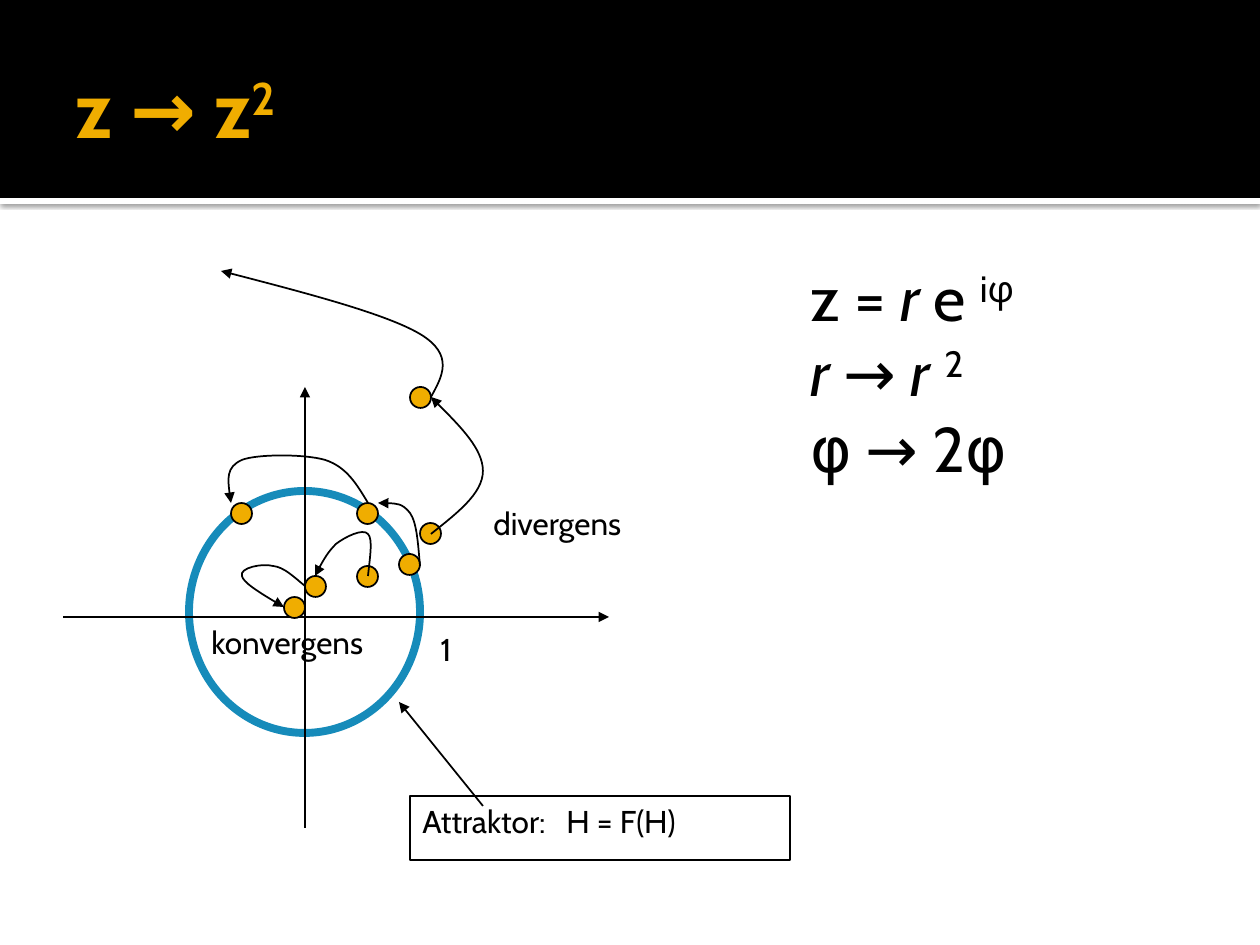
"""Builds the slide on iterating z → z² in the complex plane."""
from lxml import etree
from pptx import Presentation
from pptx import util as u
from pptx.dml.color import RGBColor
from pptx.enum import shapes, text
from pptx.oxml.ns import qn

SCALE = u.Inches(1) / 126
FONT = "Cabin"
DOT = 21
COLORS = {"black": "000000", "white": "FFFFFF", "gold": "F0AD00", "blue": "168BBA"}
SUPER = {"baseline": 30000}
ITALIC = {"italic": True}

DOTS = [(420, 523), (410, 387), (357, 566), (305, 576),
        (284, 597), (399, 554), (357, 503), (231, 503)]
ORBITS = [
    [(431, 534), (456, 514), (483, 494), (483, 471), (483, 449), (456, 422), (431, 397)],
    [(431, 397), (442, 377), (455, 355), (420, 334), (386, 314), (302, 292), (221, 271)],
    [(368, 576), (370, 557), (373, 539), (368, 534), (363, 528), (345, 537), (336, 544),
     (328, 552), (321, 564), (315, 576)],
    [(305, 586), (294, 577), (284, 567), (273, 566), (262, 563), (239, 568), (242, 576),
     (243, 582), (263, 595), (284, 607)],
    [(420, 566), (418, 544), (417, 523), (410, 513), (402, 503), (391, 503), (378, 503)],
    [(368, 503), (357, 485), (347, 467), (325, 460), (305, 454), (257, 454), (242, 460),
     (226, 467), (228, 485), (231, 503)],
]
ARROWS = [((305, 828), (305, 387)), ((63, 617), (609, 617)), ((483, 806), (399, 702))]
LABELS = [("1", (428, 624, 47, 63)), ("divergens", (481, 498, 189, 63)),
          ("konvergens", (199, 617, 219, 63))]
FORMULAS = [
    [("z = ", {}), ("r", ITALIC), (" e ", {}), ("iφ", SUPER)],
    [("r ", ITALIC), ("→ ", {}), ("r ", ITALIC), ("2", SUPER)],
    [("φ → 2φ", {})],
]


def px(*lengths):
    """Turn pixel lengths into EMU."""
    return [u.Emu(round(length * SCALE)) for length in lengths]


def rgb(name):
    """Look up a named colour."""
    return RGBColor.from_string(COLORS[name])


def add_figure(page, kind, area, fill=None, line=None, weight=1):
    """Add a preset shape with plain fill and outline."""
    figure = page.shapes.add_shape(kind, *px(*area))
    figure.shadow.inherit = False
    if fill:
        figure.fill.solid()
        figure.fill.fore_color.rgb = rgb(fill)
    else:
        figure.fill.background()
    if line:
        figure.line.color.rgb = rgb(line)
        figure.line.width = u.Pt(weight)
    else:
        figure.line.fill.background()
    return figure


def add_band_shadow(band):
    """Give the band a soft shadow underneath."""
    effects = band.element.spPr.find(qn("a:effectLst"))
    shadow = etree.SubElement(effects, qn("a:outerShdw"), blurRad=str(u.Pt(2.5)),
                              dist=str(u.Pt(0.8)), dir="5400000")
    color = etree.SubElement(shadow, qn("a:srgbClr"), val=COLORS["black"])
    etree.SubElement(color, qn("a:alpha"), val="60000")


def write(shape, lines, size, color="black", **frame_format):
    """Fill a shape with paragraphs of formatted spans."""
    frame = shape.text_frame
    settings = {"word_wrap": True, "vertical_anchor": text.MSO_ANCHOR.TOP, **frame_format}
    for name, value in settings.items():
        setattr(frame, name, value)
    for index, spans in enumerate(lines):
        para = frame.add_paragraph() if index else frame.paragraphs[0]
        para.alignment = text.PP_ALIGN.LEFT
        for words, extra in spans:
            span = para.add_run()
            span.text = words
            span.font.color.rgb = rgb(color)
            values = {"name": FONT, "size": u.Pt(size), **extra}
            baseline = values.pop("baseline", None)
            for name, value in values.items():
                setattr(span.font, name, value)
            if baseline:
                span._r.get_or_add_rPr().set("baseline", str(baseline))


def add_text(page, area, lines, size):
    """Add a text box."""
    write(page.shapes.add_textbox(*px(*area)), lines, size)


def finish_arrow(line_shape):
    """Draw a thin black line with a triangle at its end."""
    line_shape.line.color.rgb = rgb("black")
    line_shape.line.width = u.Pt(1)
    line = line_shape.element.spPr.find(qn("a:ln"))
    etree.SubElement(line, qn("a:tailEnd"), type="triangle")


def add_arrow(page, start, end):
    """Add a straight arrow."""
    arrow = page.shapes.add_connector(shapes.MSO_CONNECTOR.STRAIGHT, *px(*start, *end))
    finish_arrow(arrow)
    etree.SubElement(arrow.element.spPr, qn("a:effectLst"))


def add_orbit(page, points):
    """Add a curved arrow through cubic Bézier points."""
    builder = page.shapes.build_freeform(*points[0], scale=SCALE)
    builder.add_line_segments(points[1:], close=False)
    orbit = builder.convert_to_shape()
    orbit.shadow.inherit = False
    orbit.fill.background()
    steps = list(orbit.element.iter(qn("a:lnTo")))
    outline = steps[0].getparent()
    for first in range(0, len(steps), 3):
        curve = etree.SubElement(outline, qn("a:cubicBezTo"))
        for step in steps[first:first + 3]:
            curve.append(step[0])
            outline.remove(step)
    finish_arrow(orbit)


def add_header(page):
    """Add the black header with its title."""
    rectangle = shapes.MSO_SHAPE.RECTANGLE
    add_band_shadow(add_figure(page, rectangle, (0, 198, 1260, 6), "white"))
    add_figure(page, rectangle, (0, 0, 1260, 198), "black")
    title = page.shapes.title
    page.shapes.element.append(title.element)
    title.left, title.top, title.width, title.height = px(63, 21, 1134, 173)
    bold = {"bold": True}
    write(title, [[("z → z", bold), ("2", {**bold, **SUPER})]], 45, "gold",
          vertical_anchor=text.MSO_ANCHOR.MIDDLE, auto_size=text.MSO_AUTO_SIZE.NONE,
          margin_right=u.Inches(0.05))


def add_attractor(page):
    """Add the boxed attractor equation, its parts set apart by a tab stop."""
    box = add_figure(page, shapes.MSO_SHAPE.RECTANGLE, (410, 796, 380, 64), line="black")
    write(box, [[("Attraktor:\tH = F(H)", {})]], 18)
    tabs = etree.SubElement(box.text_frame.paragraphs[0]._p.get_or_add_pPr(), qn("a:tabLst"))
    etree.SubElement(tabs, qn("a:tab"), pos=str(px(144)[0]), algn="l")


def main():
    """Build and save the slide."""
    deck = Presentation()
    deck.slide_width, deck.slide_height = px(1260, 945)
    page = deck.slides.add_slide(deck.slide_layouts[5])
    add_header(page)
    oval = shapes.MSO_SHAPE.OVAL
    add_figure(page, oval, (189, 491, 231, 242), line="blue", weight=4.5)
    add_attractor(page)
    for start, end in ARROWS:
        add_arrow(page, start, end)
    for left, top in DOTS:
        add_figure(page, oval, (left, top, DOT, DOT), "gold", "black")
    for points in ORBITS:
        add_orbit(page, points)
    for words, area in LABELS:
        add_text(page, area, [[(words, {})]], 18)
    add_text(page, (798, 252, 253, 239), FORMULAS, 36)
    deck.save("out.pptx")


if __name__ == "__main__":
    main()
